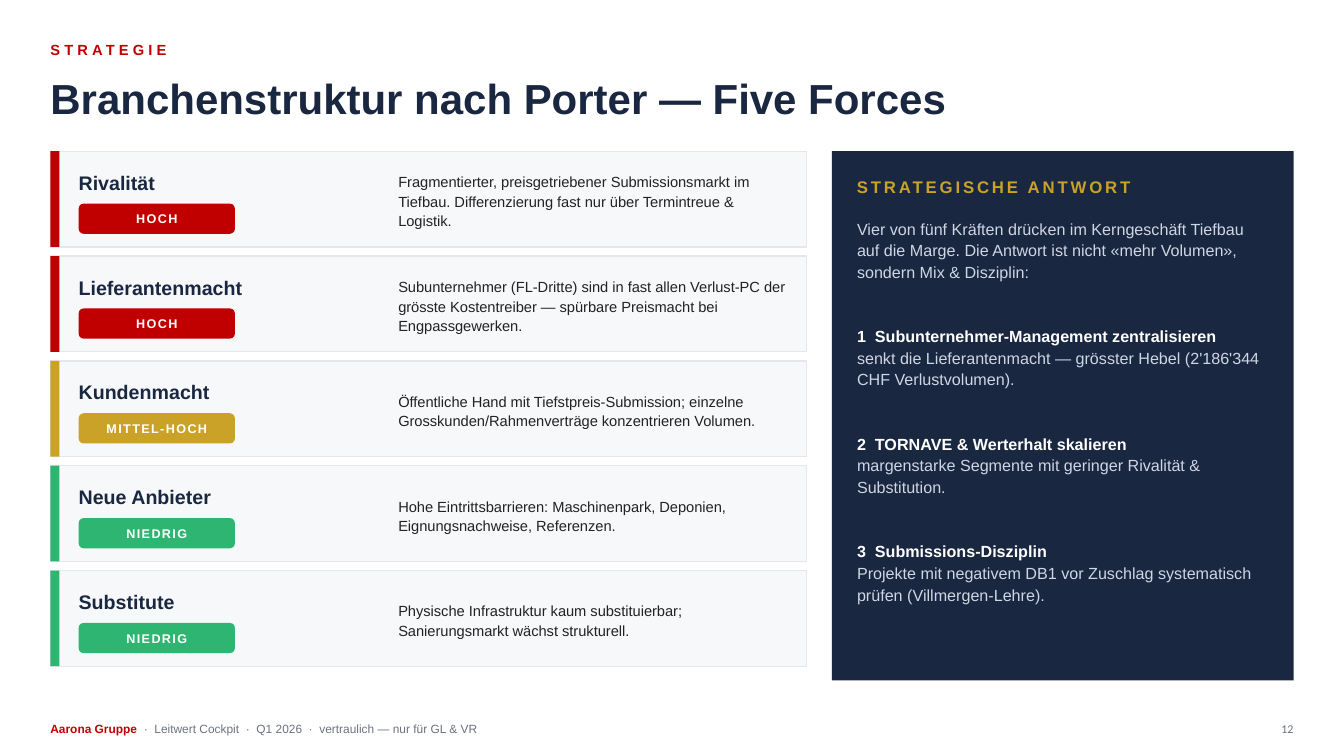
from lxml import etree
from pptx import Presentation
from pptx.dml.color import RGBColor
from pptx.enum.shapes import MSO_SHAPE
from pptx.enum.text import MSO_ANCHOR, MSO_AUTO_SIZE, PP_ALIGN
from pptx.oxml.ns import qn
from pptx.util import Inches, Pt

RECT, ROUND = MSO_SHAPE.RECTANGLE, MSO_SHAPE.ROUNDED_RECTANGLE
TOP, MIDDLE = MSO_ANCHOR.TOP, MSO_ANCHOR.MIDDLE
LEFT, CENTER, RIGHT = PP_ALIGN.LEFT, PP_ALIGN.CENTER, PP_ALIGN.RIGHT
NONE = MSO_AUTO_SIZE.NONE

COLORS = {
    "red": "C00000", "gold": "C9A227", "green": "2FB572", "navy": "1A2740",
    "card": "F7F8FA", "edge": "E4E7EC", "ink": "222222", "mist": "CFD6E4",
    "gray": "6B7280", "white": "FFFFFF",
}
RGB = {name: RGBColor.from_string(code) for name, code in COLORS.items()}

prs = Presentation()
prs.slide_width, prs.slide_height = Inches(13.33), Inches(7.5)
slide = prs.slides.add_slide(prs.slide_layouts[1])
shapes = slide.shapes


def write(shape, text, size, color, bold=False, align=LEFT, track=0,
          face="Arial", lead=1.0):
    """Fill a shape with one styled paragraph, without margins; track is in points."""
    frame = shape.text_frame
    frame.margin_left = frame.margin_right = 0
    frame.margin_top = frame.margin_bottom = 0
    frame.word_wrap, frame.auto_size = True, NONE
    frame.vertical_anchor = MIDDLE
    para = frame.paragraphs[0]
    para.text = text
    para.alignment, para.line_spacing = align, lead
    font = para.font
    font.name, font.size, font.bold = face, Pt(size), bold
    font.color.rgb = RGB[color]
    if track:
        for run in para.runs:
            run._r.get_or_add_rPr().set("spc", str(track * 100))
    return para


def block(kind, x, y, w, h, fill, edge=None):
    shape = shapes.add_shape(kind, Inches(x), Inches(y), Inches(w), Inches(h))
    shape.shadow.inherit = False
    shape.fill.solid()
    shape.fill.fore_color.rgb = RGB[fill]
    if edge:
        shape.line.color.rgb = RGB[edge]
        shape.line.width = Pt(1)
    else:
        shape.line.fill.background()
    return shape


# Heading
kicker = shapes.add_textbox(Inches(0.5), Inches(0.34), Inches(7), Inches(0.3))
write(kicker, "STRATEGIE", 10.5, "red", True, track=3)
title = shapes.title
title.left, title.top = Inches(0.5), Inches(0.62)
title.width, title.height = Inches(12.3), Inches(0.7)
write(title, "Branchenstruktur nach Porter — Five Forces", 30, "navy", True)

# Five forces
forces = [
    ("Rivalität", "HOCH", "red",
     "Fragmentierter, preisgetriebener Submissionsmarkt im Tiefbau. "
     "Differenzierung fast nur über Termintreue & Logistik."),
    ("Lieferantenmacht", "HOCH", "red",
     "Subunternehmer (FL-Dritte) sind in fast allen Verlust-PC der grösste "
     "Kostentreiber — spürbare Preismacht bei Engpassgewerken."),
    ("Kundenmacht", "MITTEL-HOCH", "gold",
     "Öffentliche Hand mit Tiefstpreis-Submission; einzelne "
     "Grosskunden/Rahmenverträge konzentrieren Volumen."),
    ("Neue Anbieter", "NIEDRIG", "green",
     "Hohe Eintrittsbarrieren: Maschinenpark, Deponien, "
     "Eignungsnachweise, Referenzen."),
    ("Substitute", "NIEDRIG", "green",
     "Physische Infrastruktur kaum substituierbar; "
     "Sanierungsmarkt wächst strukturell."),
]
for i, (force, level, color, reason) in enumerate(forces):
    y = 1.5 + 1.04 * i
    block(RECT, 0.5, y, 7.5, 0.95, "card", "edge")
    block(RECT, 0.5, y, 0.09, 0.95, color)
    name = shapes.add_textbox(Inches(0.78), Inches(y + 0.14), Inches(3), Inches(0.34))
    write(name, force, 14, "navy", True)
    pill = block(ROUND, 0.78, y + 0.52, 1.55, 0.3, color)
    pill.adjustments[0] = 0.167
    write(pill, level, 9, "white", True, CENTER, track=1)
    note = shapes.add_textbox(Inches(3.95), Inches(y + 0.1), Inches(3.85), Inches(0.78))
    write(note, reason, 10.5, "ink", lead=1.1)

# Strategic answer
block(RECT, 8.25, 1.5, 4.58, 5.25, "navy")
label = shapes.add_textbox(Inches(8.5), Inches(1.7), Inches(4.1), Inches(0.3))
write(label, "STRATEGISCHE ANTWORT", 12, "gold", True, track=2)

answer = [
    ("Vier von fünf Kräften drücken im Kerngeschäft Tiefbau auf die Marge. "
     "Die Antwort ist nicht «mehr Volumen», sondern Mix & Disziplin:", False),
    ("1  Subunternehmer-Management zentralisieren", True),
    ("senkt die Lieferantenmacht — grösster Hebel (2'186'344 CHF "
     "Verlustvolumen).", False),
    ("2  TORNAVE & Werterhalt skalieren", True),
    ("margenstarke Segmente mit geringer Rivalität & Substitution.", False),
    ("3  Submissions-Disziplin", True),
    ("Projekte mit negativem DB1 vor Zuschlag systematisch prüfen "
     "(Villmergen-Lehre).", False),
]
body = slide.placeholders[1]
body.left, body.top = Inches(8.5), Inches(2.15)
body.width, body.height = Inches(4.1), Inches(4.4)
shapes._spTree.append(body._element)  # in front of the panel
frame = body.text_frame
frame.margin_left = frame.margin_right = 0
frame.margin_top = frame.margin_bottom = 0
frame.word_wrap, frame.auto_size = True, NONE
frame.vertical_anchor = TOP
for i, (text, head) in enumerate(answer):
    para = frame.add_paragraph() if i else frame.paragraphs[0]
    para.text = text
    props = para._p.get_or_add_pPr()
    props.set("marL", "0")
    props.set("indent", "0")
    etree.SubElement(props, qn("a:buNone"))
    para.line_spacing = 1.12
    para.space_before = Pt(30.5 if head else 0)
    font = para.font
    font.name, font.size, font.bold = "Arial", Pt(11.5), head
    font.color.rgb = RGB["white" if head else "mist"]

# Footer
footer = shapes.add_textbox(Inches(0.5), Inches(7.08), Inches(9), Inches(0.3))
para = write(footer, "Aarona Gruppe", 8.5, "gray")
brand = para.runs[0].font
brand.bold, brand.color.rgb = True, RGB["red"]
para.add_run().text = "  ·  Leitwert Cockpit  ·  Q1 2026  ·  vertraulich — nur für GL & VR"
number = shapes.add_textbox(Inches(12.03), Inches(7.08), Inches(0.8), Inches(0.3))
write(number, "12", 8.5, "gray", align=RIGHT, face="Calibri")

prs.save("out.pptx")
